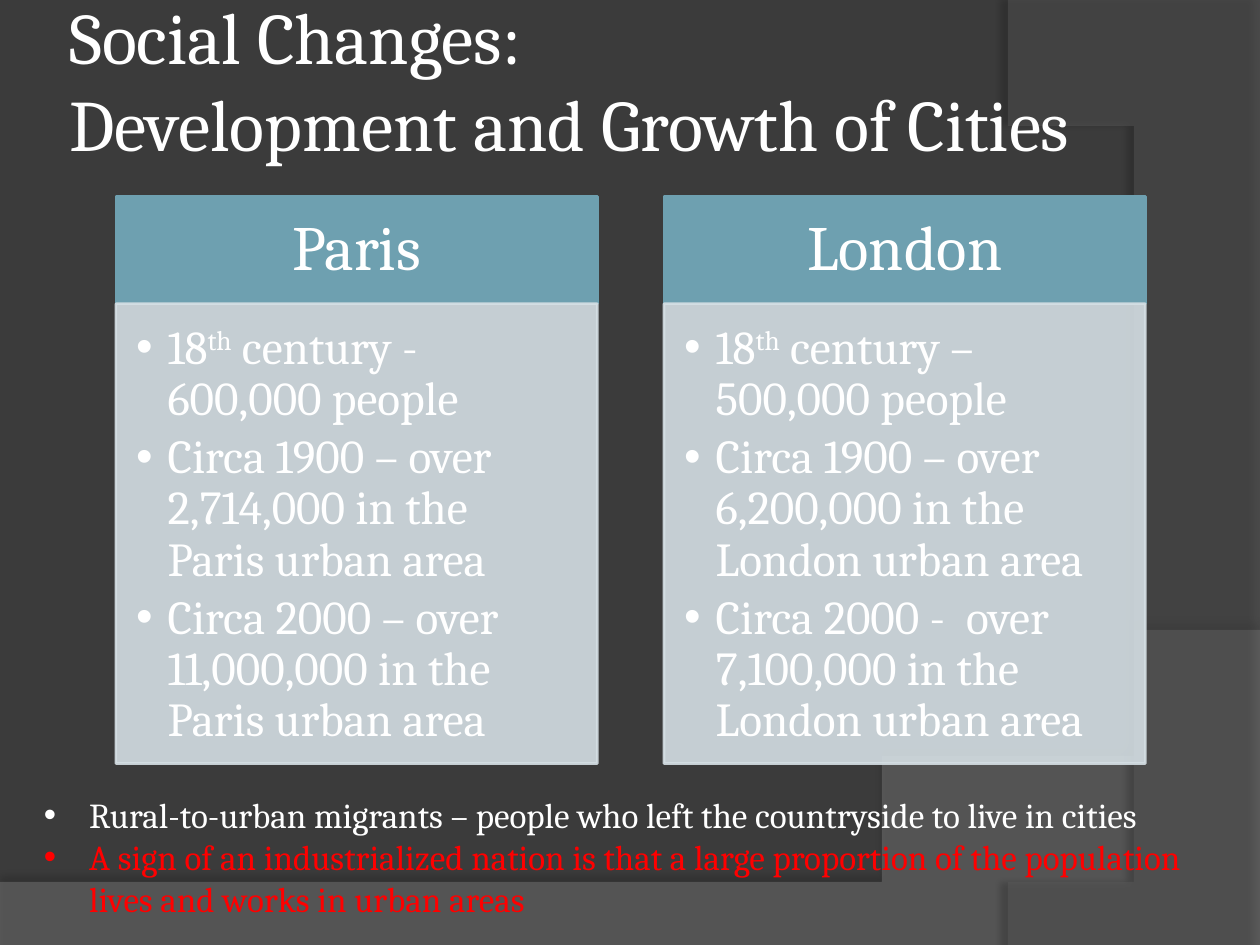
from lxml import etree
from pptx import Presentation
from pptx import util as u
from pptx.dml.color import RGBColor
from pptx.enum import shapes, text
from pptx.oxml import ns

WIDE, HIGH = 10, 7.5
FONT = "Cambria"
DARK = RGBColor(0x3B, 0x3B, 0x3B)
WAVE = RGBColor(0x7F, 0x7F, 0x7F)
ARC = RGBColor(0x5E, 0x5E, 0x5E)
TEAL = RGBColor(0x6E, 0xA0, 0xB0)
PALE = RGBColor(0xD5, 0xDF, 0xE4)
WHITE = RGBColor(0xFF, 0xFF, 0xFF)
RED = RGBColor(0xFF, 0x00, 0x00)

LEFT, TOP = 0.92, 1.56
COL, STEP = 3.82, 4.35
HEAD, BODY = 0.85, 3.65

CITIES = [
    ("Paris", ["18^th^ century - 600,000 people",
               "Circa 1900 – over 2,714,000 in the Paris urban area",
               "Circa 2000 – over 11,000,000 in the Paris urban area"]),
    ("London", ["18^th^ century – 500,000 people",
                "Circa 1900 – over 6,200,000 in the London urban area",
                "Circa 2000 -  over 7,100,000 in the London urban area"]),
]
NOTES = [
    ("Rural-to-urban migrants – people who left the countryside to live in cities", WHITE),
    ("A sign of an industrialized nation is that a large proportion of the "
     "population lives and works in urban areas", RED),
]


def add(node, tag, **attrs):
    return etree.SubElement(node, ns.qn(tag), attrs)


def fade(fill, share):
    add(fill._xPr.find(".//" + ns.qn("a:srgbClr")), "a:alpha", val=str(share * 1000))


def paint(shape, color, share=100, edge=True):
    shape.shadow.inherit = False
    parts = [shape.fill]
    if edge:
        shape.line.width = u.Pt(1.5)
        parts.append(shape.line.fill)
    else:
        shape.line.fill.background()
    for fill in parts:
        fill.solid()
        fill.fore_color.rgb = color
        if share < 100:
            fade(fill, share)


def shade(shape, share, blur, dist, turn):
    glow = add(shape._element.spPr.find(ns.qn("a:effectLst")), "a:outerShdw",
               blurRad=str(u.Pt(blur)), dist=str(u.Pt(dist)),
               dir=str(turn * 60000), algn="ctr", rotWithShape="0")
    add(add(glow, "a:srgbClr", val="000000"), "a:alpha", val=str(share * 1000))


def curve(a, b, c, d, count=48):
    for i in range(count + 1):
        t = i / count
        s = 1 - t
        yield tuple(s**3 * p + 3 * s * s * t * q + 3 * s * t * t * r + t**3 * e
                    for p, q, r, e in zip(a, b, c, d))


def sweep(slide, points, color, share):
    pen = slide.shapes.build_freeform(*points[0], scale=u.Inches(1))
    pen.add_line_segments(points[1:], close=True)
    shape = pen.convert_to_shape()
    paint(shape, color, share, False)
    return shape


def style(para, size, color=WHITE):
    for run in para.runs:
        run.font.name = FONT
        run.font.size = u.Pt(size)
        run.font.color.rgb = color


def bullet(para, indent):
    props = para._p.get_or_add_pPr()
    props.set("marL", str(u.Inches(indent)))
    props.set("indent", str(-u.Inches(indent)))
    add(props, "a:buFont", typeface="Arial")
    add(props, "a:buChar", char="•")


def frame(shape, edges, anchor=text.MSO_ANCHOR.TOP):
    body = shape.text_frame
    body.word_wrap = True
    body.vertical_anchor = anchor
    (body.margin_left, body.margin_top,
     body.margin_right, body.margin_bottom) = map(u.Inches, edges)
    return body


def box(slide, *spot):
    return slide.shapes.add_textbox(*map(u.Inches, spot))


def panel(slide, spot, color, share=100):
    shape = slide.shapes.add_shape(shapes.MSO_SHAPE.RECTANGLE, *map(u.Inches, spot))
    paint(shape, color, share)
    return shape


def scripted(para, words):
    for i, part in enumerate(words.split("^")):
        run = para.add_run()
        run.text = part
        if i % 2:
            run._r.get_or_add_rPr().set("baseline", "30000")


def card(slide, col, name, facts):
    x = LEFT + col * STEP
    head = frame(panel(slide, (x, TOP, COL, HEAD), TEAL),
                 (0.28, 0.16, 0.28, 0.16), text.MSO_ANCHOR.MIDDLE)
    head.text = name
    para = head.paragraphs[0]
    para.alignment = text.PP_ALIGN.CENTER
    para.line_spacing = 0.9
    style(para, 36)
    body = frame(panel(slide, (x, TOP + HEAD, COL, BODY), PALE, 90),
                 (0.16, 0.16, 0.21, 0.24))
    for i, fact in enumerate(facts):
        para = body.add_paragraph() if i else body.paragraphs[0]
        scripted(para, fact)
        para.alignment = text.PP_ALIGN.LEFT
        para.line_spacing = 0.9
        para.space_after = u.Pt(4)
        bullet(para, 0.25)
        style(para, 27)


def title(slide, words):
    body = frame(box(slide, 0.5, 0, 8.92, 1.25), [0.05] * 4, text.MSO_ANCHOR.MIDDLE)
    body.text = words
    style(body.paragraphs[0], 41.4)


def notes(slide):
    body = frame(box(slide, 0.25, 6.25, 9.5, 1.11), (0.1, 0.05, 0.1, 0.05))
    body.text = "\n".join(words for words, _ in NOTES)
    for para, (_, color) in zip(body.paragraphs, NOTES):
        bullet(para, 0.36)
        style(para, 20, color)


def backdrop(slide):
    fill = slide.background.fill
    fill.solid()
    fill.fore_color.rgb = DARK
    wave = [(0, HIGH), (WIDE, HIGH)]
    wave += curve((WIDE, 5.2), (5.59, 7.29), (3.91, 7.19), (0, 7.05))
    shade(sweep(slide, wave, WAVE, 45), 35, 4, 3.5, 270)
    arc = [(WIDE, 0.02), (WIDE, HIGH)]
    arc += curve((8.21, HIGH), (9.35, 6.19), (10.18, 3), (8, 0))
    shade(sweep(slide, arc, ARC, 40), 45, 4, 4, 180)


def main():
    deck = Presentation()
    deck.slide_width, deck.slide_height = u.Inches(WIDE), u.Inches(HIGH)
    slide = deck.slides.add_slide(deck.slide_layouts[6])
    backdrop(slide)
    title(slide, "Social Changes:\vDevelopment and Growth of Cities")
    for col, (name, facts) in enumerate(CITIES):
        card(slide, col, name, facts)
    notes(slide)
    deck.save("out.pptx")


main()
